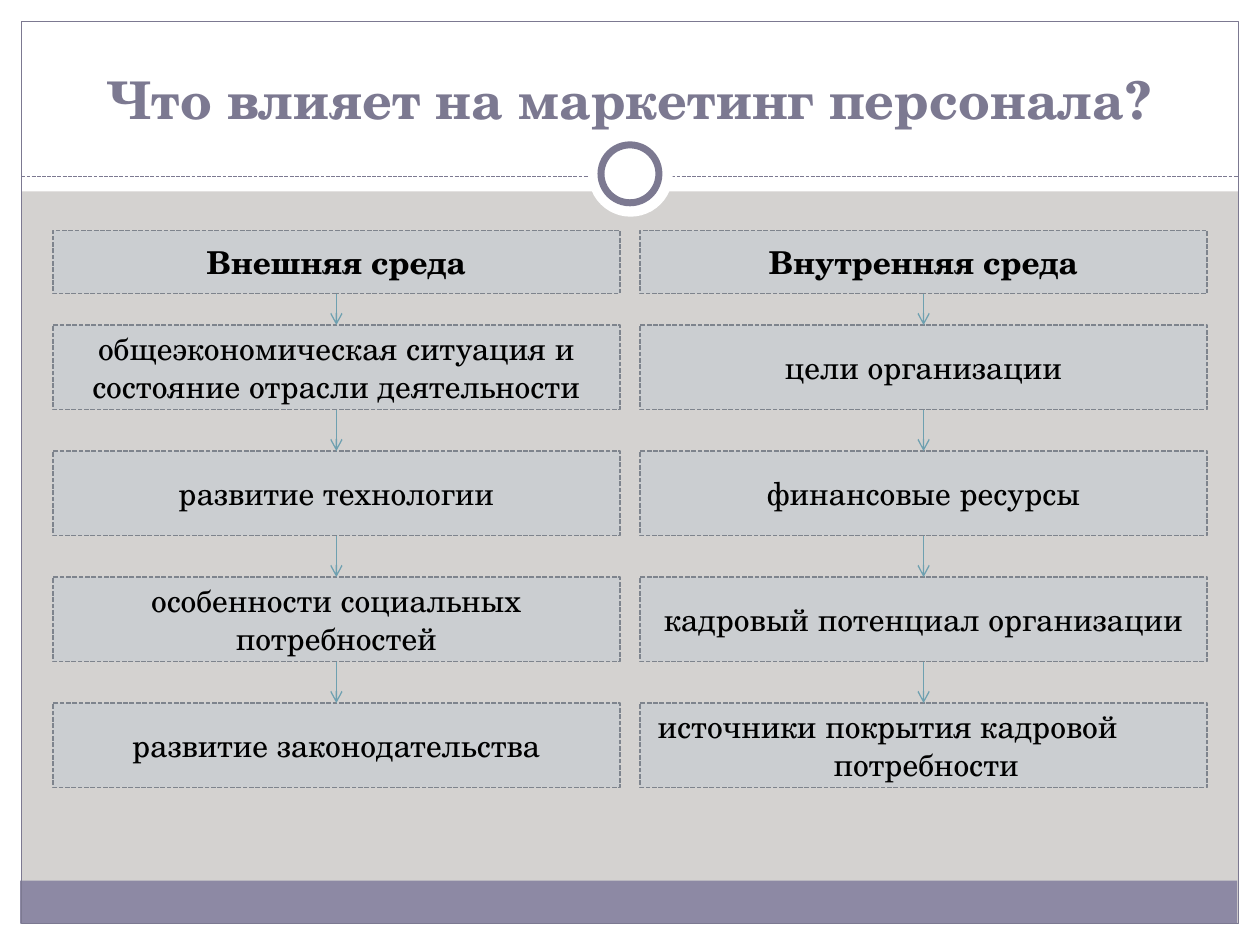
from dataclasses import dataclass
from typing import Optional

from lxml import etree
from pptx import Presentation
from pptx.dml.color import RGBColor
from pptx.enum import dml, shapes, text
from pptx.oxml.ns import qn
from pptx.util import Inches, Pt

FONT = "TeX Gyre Schola"
COLORS = {
    "background": "D4D2D0",
    "white": "FFFFFF",
    "footer": "8D89A4",
    "accent": "7C7991",
    "box": "CBCED1",
    "border": "7E848D",
    "arrow": "6EA0B0",
    "text": "000000",
}
RECT = shapes.MSO_SHAPE.RECTANGLE
OVAL = shapes.MSO_SHAPE.OVAL
COLUMN_WIDTH = 4.5
HEADER_TOP, HEADER_HEIGHT = 1.83, 0.5
FACTOR_TOP, FACTOR_HEIGHT, FACTOR_PITCH = 2.58, 0.67, 1


@dataclass
class Panel:
    left: float
    top: float
    width: float
    height: float
    fill: Optional[str] = "white"
    line: Optional[str] = None
    weight: float = 0.75
    dashed: bool = False
    kind: shapes.MSO_SHAPE = RECT


@dataclass
class Column:
    left: float
    header: str
    factors: list[str]


DECOR = [
    Panel(0, 7.33, 10, 0.17),
    Panel(0, 0, 10, 1.52),
    Panel(0, 0, 0.17, 7.5),
    Panel(9.83, 0, 0.17, 7.5),
    Panel(0.16, 6.99, 9.66, 0.34, fill="footer"),
    Panel(0.17, 0.17, 9.66, 7.16, fill=None, line="accent"),
]
RING = [
    Panel(4.67, 1.05, 0.67, 0.67, kind=OVAL),
    Panel(4.77, 1.15, 0.46, 0.46, line="accent", weight=4, kind=OVAL),
]
COLUMNS = [
    Column(0.42, "Внешняя среда", [
        "общеэкономическая ситуация и состояние отрасли деятельности",
        "развитие технологии",
        "особенности социальных потребностей",
        "развитие законодательства",
    ]),
    Column(5.08, "Внутренняя среда", [
        "цели организации",
        "финансовые ресурсы",
        "кадровый потенциал организации",
        "источники покрытия кадровой\nпотребности",
    ]),
]


def color(name: str) -> RGBColor:
    return RGBColor.from_string(COLORS[name])


def style_line(line, name: str, weight: float, dashed: bool = False) -> None:
    line.color.rgb = color(name)
    line.width = Pt(weight)
    if dashed:
        line.dash_style = dml.MSO_LINE.SQUARE_DOT


def add_panel(page, panel: Panel):
    shape = page.shapes.add_shape(
        panel.kind, Inches(panel.left), Inches(panel.top),
        Inches(panel.width), Inches(panel.height))
    shape.shadow.inherit = False
    if panel.fill:
        shape.fill.solid()
        shape.fill.fore_color.rgb = color(panel.fill)
    else:
        shape.fill.background()
    if panel.line:
        style_line(shape.line, panel.line, panel.weight, panel.dashed)
    else:
        shape.line.fill.background()
    return shape


def add_line(page, start: tuple[float, float], end: tuple[float, float],
             name: str, dashed: bool = False, arrow: bool = False) -> None:
    line = page.shapes.add_connector(
        shapes.MSO_CONNECTOR.STRAIGHT, *map(Inches, start + end))
    style_line(line.line, name, 0.75, dashed)
    properties = line.element.spPr
    if arrow:
        etree.SubElement(properties.find(qn("a:ln")), qn("a:tailEnd"), type="arrow")
    etree.SubElement(properties, qn("a:effectLst"))


def write(shape, words: str, size: float, name: str, bold: bool, anchor) -> None:
    frame = shape.text_frame
    frame.text = words
    frame.word_wrap = True
    frame.auto_size = text.MSO_AUTO_SIZE.NONE
    frame.vertical_anchor = anchor
    for para in frame.paragraphs:
        para.alignment = text.PP_ALIGN.CENTER
        for span in para.runs:
            span.font.name = FONT
            span.font.size = Pt(size)
            span.font.bold = bold
            span.font.color.rgb = color(name)


def add_box(page, left: float, top: float, height: float, words: str,
            bold: bool = False) -> None:
    box = add_panel(page, Panel(left, top, COLUMN_WIDTH, height, "box",
                                "border", 0.9, dashed=True))
    write(box, words, 18, "text", bold, text.MSO_ANCHOR.MIDDLE)
    paragraphs = box.text_frame.paragraphs
    if len(paragraphs) > 1:
        # The first line starts at the left edge, the next one is centred.
        paragraphs[0].alignment = text.PP_ALIGN.LEFT
        box.text_frame.margin_left = Inches(0.14)


def add_column(page, column: Column) -> None:
    """Draw a header and its factors, chained by arrows."""
    add_box(page, column.left, HEADER_TOP, HEADER_HEIGHT, column.header, bold=True)
    center = column.left + COLUMN_WIDTH / 2
    bottom = HEADER_TOP + HEADER_HEIGHT
    for row, factor in enumerate(column.factors):
        top = FACTOR_TOP + row * FACTOR_PITCH
        add_box(page, column.left, top, FACTOR_HEIGHT, factor)
        add_line(page, (center, bottom), (center, top), "arrow", arrow=True)
        bottom = top + FACTOR_HEIGHT


def add_title(page, words: str) -> None:
    title = page.shapes.title
    title.left, title.top = Inches(0.33), Inches(0.25)
    title.width, title.height = Inches(9.33), Inches(0.83)
    write(title, words, 29.7, "accent", True, text.MSO_ANCHOR.BOTTOM)
    title.element.getparent().append(title.element)  # in front of the white band


def main() -> None:
    deck = Presentation()
    deck.slide_width, deck.slide_height = Inches(10), Inches(7.5)
    page = deck.slides.add_slide(deck.slide_layouts.get_by_name("Title Only"))
    page.background.fill.solid()
    page.background.fill.fore_color.rgb = color("background")
    for panel in DECOR:
        add_panel(page, panel)
    add_line(page, (0.17, 1.4), (9.83, 1.4), "accent", dashed=True)
    for panel in RING:
        add_panel(page, panel)
    add_title(page, "Что влияет на маркетинг персонала?")
    for column in COLUMNS:
        add_column(page, column)
    deck.save("out.pptx")


if __name__ == "__main__":
    main()
